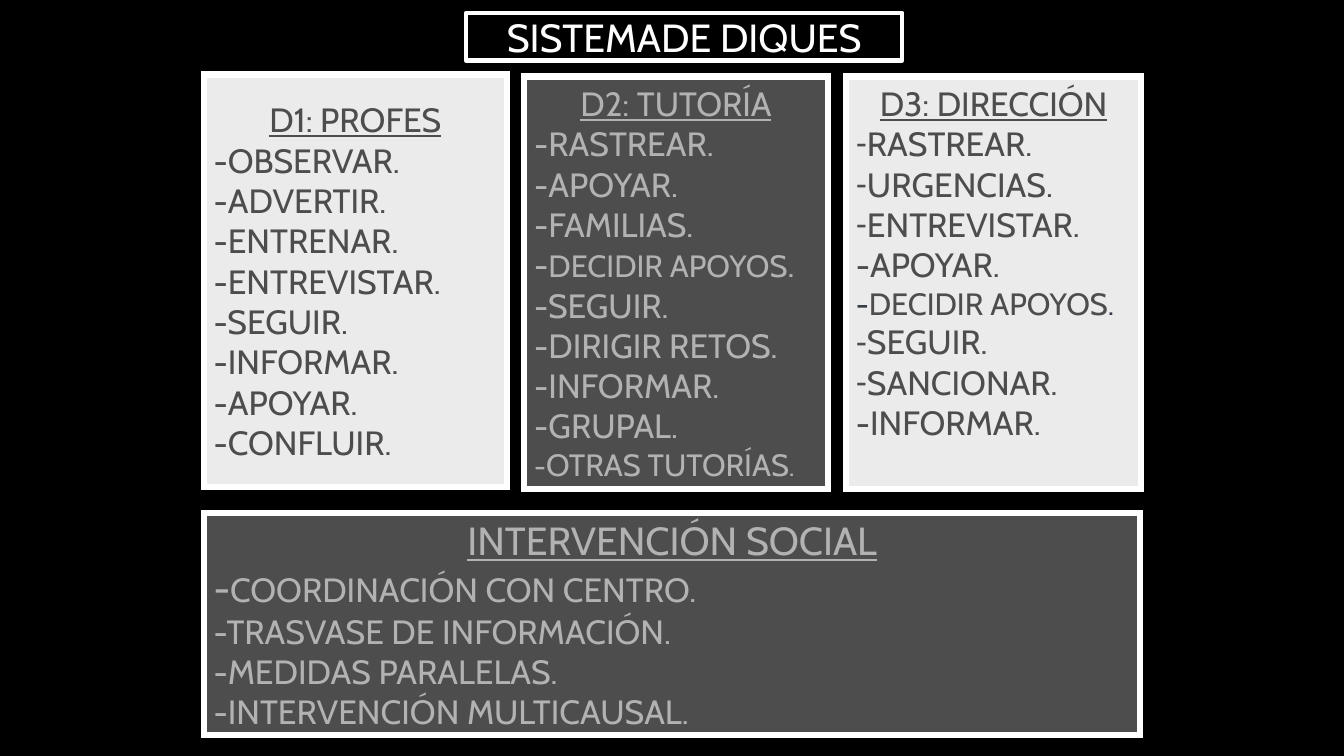
"""Builds the slide that shows the three school dykes and social intervention."""
from lxml import etree
from pptx import Presentation
from pptx.dml.color import RGBColor
from pptx.enum.shapes import MSO_SHAPE
from pptx.enum.text import MSO_ANCHOR, MSO_AUTO_SIZE, PP_ALIGN
from pptx.oxml.ns import qn
from pptx.util import Inches, Pt

RECTANGLE = MSO_SHAPE.RECTANGLE
MIDDLE = MSO_ANCHOR.MIDDLE
NO_AUTOFIT = MSO_AUTO_SIZE.NONE
LEFT, CENTER = PP_ALIGN.LEFT, PP_ALIGN.CENTER

BLACK, WHITE = "000000", "FFFFFF"
DARK, LIGHT, SILVER, SLATE = "4D4D4D", "EBEBEB", "B2B2B2", "363D46"
BODY_SIZE = 24


def color(hex_code):
    """Return the colour for a hex string."""
    return RGBColor.from_string(hex_code)


class DykeSlide:
    """Holds the style and the slide, and draws its panels."""

    font_name = "Cabin"

    def __init__(self, presentation):
        """Add a title-only slide with a black background."""
        self.slide = presentation.slides.add_slide(presentation.slide_layouts[5])
        background = self.slide.background.fill
        background.solid()
        background.fore_color.rgb = color(BLACK)

    def format_run(self, run, size, ink, underline=False):
        """Give a run its font."""
        run.font.name = self.font_name
        run.font.size = Pt(size)
        run.font.color.rgb = color(ink)
        run.font.underline = underline

    def outline(self, shape, width):
        """Give a shape its white border."""
        shape.line.color.rgb = color(WHITE)
        shape.line.width = Pt(width)

    def title(self, text, left, top, width, height):
        """Move and format the title placeholder."""
        title = self.slide.shapes.title
        title.left, title.top = Inches(left), Inches(top)
        title.width, title.height = Inches(width), Inches(height)
        self.outline(title, 3)
        frame = title.text_frame
        frame.text = text
        frame.auto_size = NO_AUTOFIT
        frame.vertical_anchor = MIDDLE
        frame.paragraphs[0].alignment = CENTER
        self.format_run(frame.paragraphs[0].runs[0], 28, WHITE)

    def dash_bullet(self, paragraph):
        """Make a paragraph start with a dash bullet."""
        properties = paragraph._p.get_or_add_pPr()
        properties.set("marL", "0")
        properties.set("indent", "0")
        etree.SubElement(properties, qn("a:buFont")).set("typeface", "Arial")
        etree.SubElement(properties, qn("a:buChar")).set("char", "-")

    def panel(self, box, fill, ink, heading, items, heading_size=BODY_SIZE,
              bulleted=(), bottom_inset=0.05):
        """Draw a bordered panel with an underlined heading and its items."""
        panel = self.slide.shapes.add_shape(RECTANGLE, *map(Inches, box))
        panel.shadow.inherit = False
        panel.fill.solid()
        panel.fill.fore_color.rgb = color(fill)
        self.outline(panel, 4.5)
        etree.SubElement(panel.line._get_or_add_ln(), qn("a:miter")).set("lim", "800000")
        frame = panel.text_frame
        frame.word_wrap = True
        frame.vertical_anchor = MIDDLE
        frame.margin_bottom = Inches(bottom_inset)
        frame.text = heading
        frame.paragraphs[0].alignment = CENTER
        self.format_run(frame.paragraphs[0].runs[0], heading_size, ink, True)
        for item in items:
            paragraph = frame.add_paragraph()
            paragraph.alignment = LEFT
            if item in bulleted:
                self.dash_bullet(paragraph)
            pieces = [(item, BODY_SIZE, ink)] if isinstance(item, str) else item
            for text, size, piece_ink in pieces:
                run = paragraph.add_run()
                run.text = text
                self.format_run(run, size, piece_ink)


def main():
    """Build and save the slide."""
    presentation = Presentation()
    presentation.slide_width = Inches(13.33)
    presentation.slide_height = Inches(7.5)
    dykes = DykeSlide(presentation)

    dykes.title("SISTEMADE DIQUES", 4.62, 0.13, 4.33, 0.47)

    teachers = ["-OBSERVAR.", "-ADVERTIR.", "-ENTRENAR.", "-ENTREVISTAR.",
                "-SEGUIR.", "-INFORMAR.", "-APOYAR.", "-CONFLUIR."]
    dykes.panel((2.02, 0.74, 3.01, 4.09), LIGHT, DARK, "D1: PROFES", teachers)

    tutoring = ["-RASTREAR.", "-APOYAR.", "-FAMILIAS.",
                [("-", 24, SILVER), ("DECIDIR APOYOS", 22, SILVER), (".", 24, SILVER)],
                "-SEGUIR.", "-DIRIGIR RETOS.", "-INFORMAR.", "-GRUPAL.",
                [("-", 20, SILVER), ("OTRAS TUTORÍAS", 22, SILVER), (".", 20, SILVER)]]
    dykes.panel((5.2, 0.76, 3.01, 4.09), DARK, SILVER, "D2: TUTORÍA", tutoring)

    management = ["RASTREAR.", "URGENCIAS.", "ENTREVISTAR.", "-APOYAR.",
                  [("-", 22, SLATE), ("DECIDIR APOYOS", 22, DARK), (".", 22, SLATE)],
                  "SEGUIR.", "SANCIONAR.", "-INFORMAR."]
    dashed = ("RASTREAR.", "URGENCIAS.", "ENTREVISTAR.", "SEGUIR.", "SANCIONAR.")
    dykes.panel((8.39, 0.76, 2.93, 4.09), LIGHT, DARK, "D3: DIRECCIÓN", management,
                bulleted=dashed, bottom_inset=0.45)

    social = [[("-", 28, SILVER), ("COORDINACIÓN CON CENTRO.", 24, SILVER)],
              "-TRASVASE DE INFORMACIÓN.", "-MEDIDAS PARALELAS.",
              "-INTERVENCIÓN MULTICAUSAL."]
    dykes.panel((2.02, 5.09, 9.29, 2.2), DARK, SILVER, "INTERVENCIÓN SOCIAL", social,
                heading_size=28)

    presentation.save("out.pptx")


if __name__ == "__main__":
    main()
